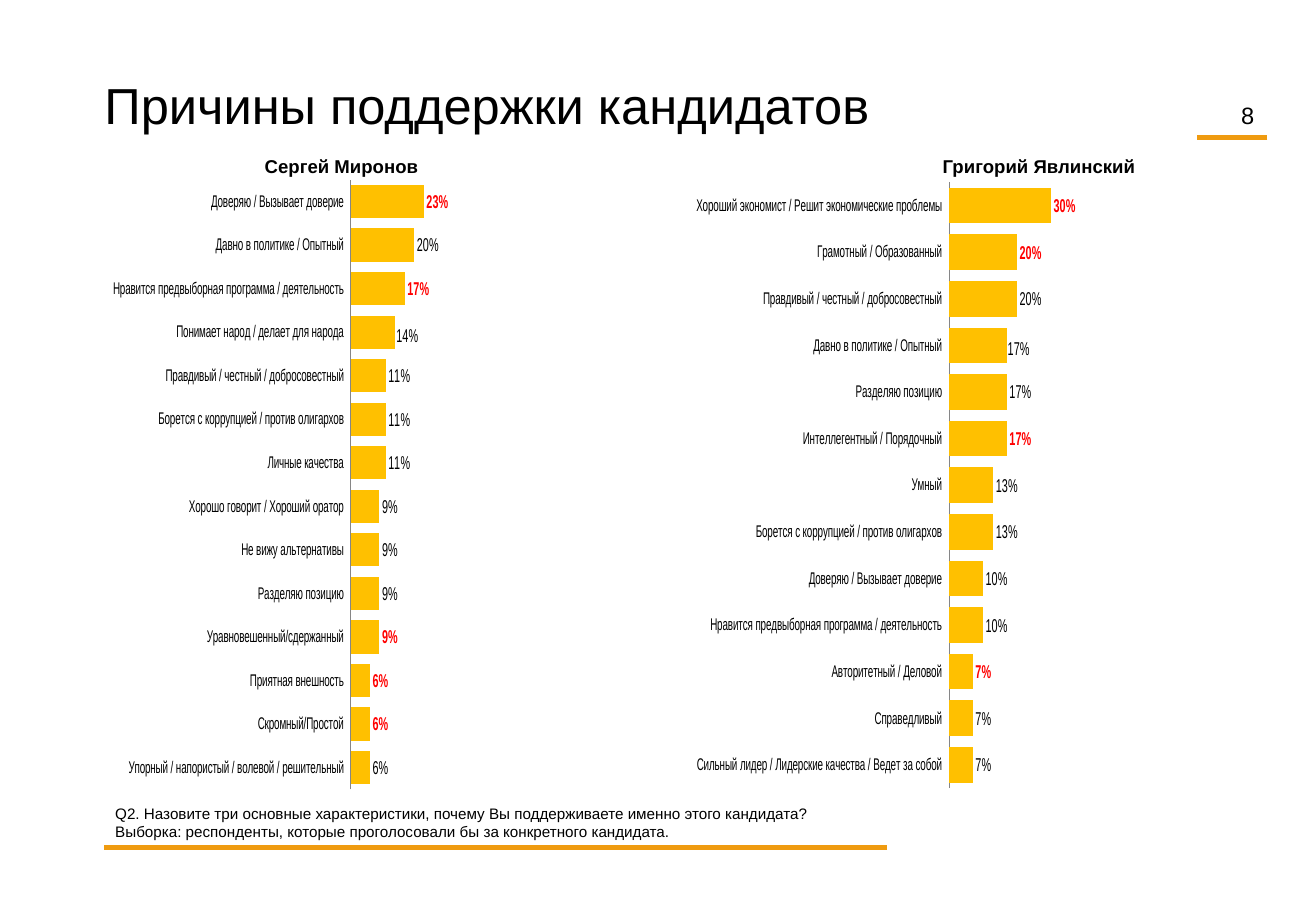
from dataclasses import dataclass

from lxml import etree
from pptx import Presentation
from pptx import util as u
from pptx.chart.data import CategoryChartData
from pptx.dml.color import RGBColor
from pptx.enum import chart as ch, shapes, text
from pptx.oxml import parse_xml
from pptx.oxml.ns import nsdecls, qn

COLORS = {"ink": "000000", "accent": "EF9B10", "bar": "FFC000",
          "highlight": "FF0000", "axis": "868686"}
FONT = "Arial"
PERCENT = "#,##0%"


@dataclass
class Caption:
    lines: list[str]
    box: tuple[float, float, float, float]
    size: float
    bold: bool = False
    align: text.PP_ALIGN = text.PP_ALIGN.LEFT
    anchor: text.MSO_ANCHOR = text.MSO_ANCHOR.TOP
    left_inset: float = 0.1
    right_inset: float = 0.1


@dataclass
class Rule:
    left: float
    right: float
    y: float


@dataclass
class Candidate:
    box: tuple[float, float, float, float]
    reasons: list[tuple[str, int]]
    highlighted: list[int]
    nudged: int


CAPTIONS = [
    Caption(["8"], (9.84, 0.78, 0.58, 0.29), 14, align=text.PP_ALIGN.RIGHT),
    Caption(["Причины поддержки кандидатов"], (0.86, 0.55, 8.98, 0.61), 30,
            anchor=text.MSO_ANCHOR.BOTTOM, left_inset=0, right_inset=0),
    Caption(["Сергей Миронов"], (1.72, 1.23, 2.28, 0.24), 11, True,
            text.PP_ALIGN.CENTER, left_inset=0),
    Caption(["Григорий Явлинский"], (7.46, 1.23, 2.28, 0.24), 11, True,
            text.PP_ALIGN.CENTER, left_inset=0),
    Caption(["Q2. Назовите три основные характеристики, почему Вы поддерживаете "
             "именно этого кандидата?",
             "Выборка: респонденты, которые проголосовали бы за конкретного кандидата."],
            (0.85, 6.57, 9.61, 0.4), 9),
]
RULES = [Rule(0.86, 7.3, 6.98), Rule(9.85, 10.43, 1.13)]
CANDIDATES = [
    Candidate((0.93, 1.47, 4.57, 5.07), [
        ("Доверяю / Вызывает доверие", 23),
        ("Давно в политике / Опытный", 20),
        ("Нравится предвыборная программа / деятельность", 17),
        ("Понимает народ / делает для народа", 14),
        ("Правдивый / честный / добросовестный", 11),
        ("Борется с коррупцией / против олигархов", 11),
        ("Личные качества", 11),
        ("Хорошо говорит / Хороший оратор", 9),
        ("Не вижу альтернативы", 9),
        ("Разделяю позицию", 9),
        ("Уравновешенный/сдержанный", 9),
        ("Приятная внешность", 6),
        ("Скромный/Простой", 6),
        ("Упорный / напористый / волевой / решительный", 6),
    ], [0, 2, 10, 11, 12], 3),
    Candidate((5.73, 1.49, 4.88, 5.04), [
        ("Хороший экономист / Решит экономические проблемы", 30),
        ("Грамотный / Образованный", 20),
        ("Правдивый / честный / добросовестный", 20),
        ("Давно в политике / Опытный", 17),
        ("Разделяю позицию", 17),
        ("Интеллегентный / Порядочный", 17),
        ("Умный", 13),
        ("Борется с коррупцией / против олигархов", 13),
        ("Доверяю / Вызывает доверие", 10),
        ("Нравится предвыборная программа / деятельность", 10),
        ("Авторитетный / Деловой", 7),
        ("Справедливый", 7),
        ("Сильный лидер / Лидерские качества / Ведет за собой", 7),
    ], [0, 1, 5, 10], 3),
]


def color(name: str) -> RGBColor:
    return RGBColor.from_string(COLORS[name])


def apply(target, formats: dict) -> None:
    """Set every attribute named in formats on target."""
    for name, value in formats.items():
        setattr(target, name, value)


def style_font(font, size: float, bold: bool = False, ink: str = "ink") -> None:
    apply(font, {"name": FONT, "size": u.Pt(size), "bold": bold})
    font.color.rgb = color(ink)


def add_caption(slide, caption: Caption) -> None:
    frame = slide.shapes.add_textbox(*map(u.Inches, caption.box)).text_frame
    apply(frame, {"word_wrap": True, "vertical_anchor": caption.anchor,
                  "margin_left": u.Inches(caption.left_inset),
                  "margin_right": u.Inches(caption.right_inset)})
    frame.text = "\n".join(caption.lines)
    for paragraph in frame.paragraphs:
        paragraph.alignment = caption.align
        style_font(paragraph.font, caption.size, caption.bold)


def add_rule(slide, rule: Rule) -> None:
    line = slide.shapes.add_connector(
        shapes.MSO_CONNECTOR.STRAIGHT, u.Inches(rule.right), u.Inches(rule.y),
        u.Inches(rule.left), u.Inches(rule.y))
    line.line.color.rgb = color("accent")
    line.line.width = u.Pt(3)
    etree.SubElement(line._element.spPr, qn("a:effectLst"))


def manual_layout(places: dict[str, object]):
    """Build a chart layout element from its settings, in schema order."""
    settings = "".join(f'<c:{tag} val="{value}"/>' for tag, value in places.items())
    return parse_xml(f'<c:layout {nsdecls("c")}><c:manualLayout>{settings}'
                     "</c:manualLayout></c:layout>")


def style_axes(chart) -> None:
    reasons, shares = chart.category_axis, chart.value_axis
    apply(reasons, {"reverse_order": True, "has_major_gridlines": False,
                    "major_tick_mark": ch.XL_TICK_MARK.NONE,
                    "tick_label_position": ch.XL_TICK_LABEL_POSITION.LOW})
    style_font(reasons.tick_labels.font, 10)
    reasons.format.line.color.rgb = color("axis")
    reasons.format.line.width = u.Pt(0.75)
    apply(shares, {"minimum_scale": 0, "maximum_scale": 1, "major_unit": 0.5,
                   "has_major_gridlines": False, "visible": False})
    shares.tick_labels.number_format = PERCENT
    shares.tick_labels.number_format_is_linked = False


def add_candidate_chart(slide, candidate: Candidate) -> None:
    support = CategoryChartData(number_format=PERCENT)
    support.categories = [reason for reason, _ in candidate.reasons]
    support.add_series("Series 1", [share / 100 for _, share in candidate.reasons])
    chart = slide.shapes.add_chart(ch.XL_CHART_TYPE.BAR_CLUSTERED,
                                   *map(u.Inches, candidate.box), support).chart
    apply(chart, {"has_legend": False, "has_title": False})
    style_font(chart.font, 11)
    style_axes(chart)

    area = chart._chartSpace.chart.plotArea
    for layout in area.findall(qn("c:layout")):
        area.remove(layout)
    area.insert(0, manual_layout({
        "layoutTarget": "inner", "xMode": "edge", "yMode": "edge",
        "x": 0.018, "y": 0.002, "w": 0.98, "h": 0.99}))

    plot = chart.plots[0]
    apply(plot, {"gap_width": 31, "vary_by_categories": False})
    bars = plot.series[0]
    bars.format.fill.solid()
    bars.format.fill.fore_color.rgb = color("bar")
    apply(bars.data_labels, {"show_value": True, "number_format": PERCENT,
                             "number_format_is_linked": False,
                             "position": ch.XL_LABEL_POSITION.OUTSIDE_END})
    style_font(bars.data_labels.font, 11)

    for index in sorted([*candidate.highlighted, candidate.nudged]):
        label = bars.points[index].data_label
        strong = index in candidate.highlighted
        style_font(label.font, 11, strong, "highlight" if strong else "ink")
        label.position = ch.XL_LABEL_POSITION.OUTSIDE_END
    nudged = bars._element.xpath(f'.//c:dLbl[c:idx/@val="{candidate.nudged}"]')[0]
    nudged.insert(1, manual_layout({"x": -0.005, "y": 0.005}))


def main() -> None:
    deck = Presentation()
    apply(deck, {"slide_width": u.Inches(10.83), "slide_height": u.Inches(7.5)})
    slide = deck.slides.add_slide(deck.slide_layouts[6])
    for rule in RULES:
        add_rule(slide, rule)
    for candidate in CANDIDATES:
        add_candidate_chart(slide, candidate)
    for caption in CAPTIONS:
        add_caption(slide, caption)
    deck.save("out.pptx")


if __name__ == "__main__":
    main()
